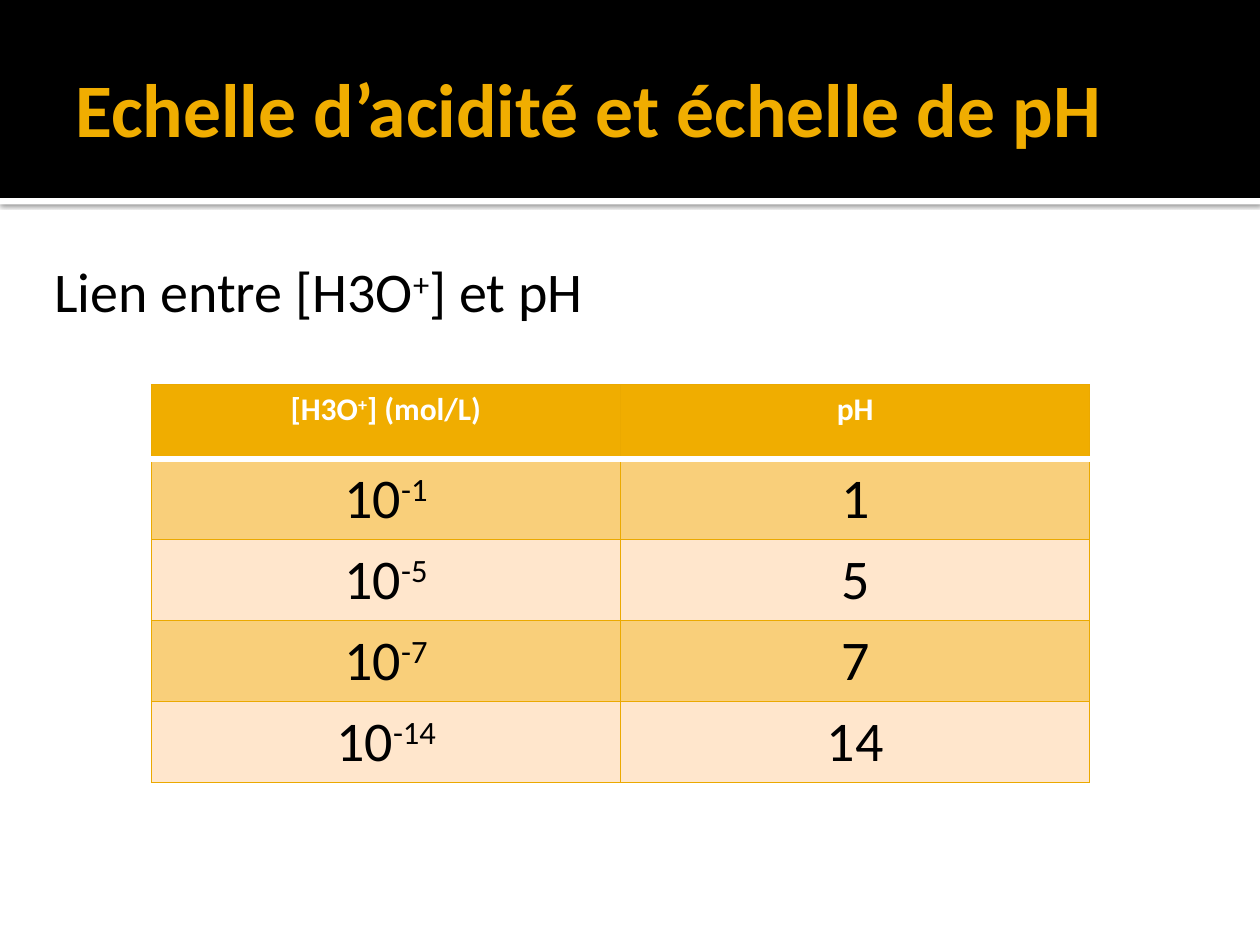
from dataclasses import dataclass

from lxml import etree
from pptx import Presentation
from pptx.dml.color import RGBColor
from pptx.enum.shapes import MSO_SHAPE
from pptx.enum.text import MSO_ANCHOR, PP_ALIGN
from pptx.oxml import parse_xml
from pptx.oxml.ns import nsdecls, qn
from pptx.util import Cm, Pt

RECTANGLE = MSO_SHAPE.RECTANGLE
TOP, MIDDLE = MSO_ANCHOR.TOP, MSO_ANCHOR.MIDDLE
LEFT, CENTER = PP_ALIGN.LEFT, PP_ALIGN.CENTER

FONT = "Calibri"
BLACK, WHITE, GOLD = "000000", "FFFFFF", "F0AD00"
GRID_GOLD, DARK_BAND, LIGHT_BAND = "EBA900", "F9CF7A", "FFE6CC"
SLIDE_WIDTH, SLIDE_HEIGHT = 25.4, 19.05
BANNER_HEIGHT = 3.99
HEADER_HEIGHT, ROW_HEIGHT, COLUMN_WIDTH = 1.5, 1.63, 9.46


@dataclass(frozen=True)
class TextStyle:
    size: float
    color: str
    bold: bool = False
    align: PP_ALIGN = LEFT


@dataclass(frozen=True)
class Formula:
    base: str
    exponent: str = ""
    rest: str = ""


@dataclass(frozen=True)
class Box:
    left: float
    top: float
    width: float
    height: float

    def lengths(self) -> tuple:
        return Cm(self.left), Cm(self.top), Cm(self.width), Cm(self.height)


TITLE = TextStyle(43.2, GOLD, bold=True)
SUBTITLE = TextStyle(32, BLACK)
HEADER = TextStyle(18, WHITE, bold=True, align=CENTER)
VALUE = TextStyle(32, BLACK, align=CENTER)
PH_VALUES = (1, 5, 7, 14)


def rgb(color: str) -> RGBColor:
    return RGBColor.from_string(color)


def write(frame, formula: Formula, style: TextStyle) -> None:
    paragraph = frame.paragraphs[0]
    paragraph.alignment = style.align
    paragraph.font.name = FONT
    paragraph.font.size = Pt(style.size)
    paragraph.font.bold = style.bold
    paragraph.font.color.rgb = rgb(style.color)
    for part in (formula.base, formula.exponent, formula.rest):
        if part:
            run = paragraph.add_run()
            run.text = part
            if part == formula.exponent:
                run.font.name = FONT
                run._r.get_or_add_rPr().set("baseline", "30000")


def add_text(slide, box: Box, formula: Formula, style: TextStyle,
             anchor: MSO_ANCHOR, margins: tuple) -> None:
    frame = slide.shapes.add_textbox(*box.lengths()).text_frame
    frame.word_wrap = True
    frame.vertical_anchor = anchor
    frame.margin_left, frame.margin_top = Cm(margins[0]), Cm(margins[1])
    frame.margin_right = frame.margin_bottom = Cm(0.13)
    write(frame, formula, style)


def add_band(slide, box: Box, color: str):
    band = slide.shapes.add_shape(RECTANGLE, *box.lengths())
    band.shadow.inherit = False
    band.fill.solid()
    band.fill.fore_color.rgb = rgb(color)
    band.line.fill.background()
    return band


def cast_shadow(band) -> None:
    effects = band._element.spPr.find(qn("a:effectLst"))
    effects.append(parse_xml(
        f'<a:outerShdw {nsdecls("a")} blurRad="{Pt(2.5)}" dist="{Pt(0.8)}" '
        f'dir="5400000" algn="tl" rotWithShape="0"><a:srgbClr val="{BLACK}">'
        '<a:alpha val="60000"/></a:srgbClr></a:outerShdw>'))


def add_border(cell, side: str, color: str, width: float) -> None:
    line = etree.SubElement(cell._tc.get_or_add_tcPr(), qn(f"a:ln{side}"),
                            w=str(Pt(width)))
    fill = etree.SubElement(line, qn("a:solidFill"))
    etree.SubElement(fill, qn("a:srgbClr"), val=color)


def fill_cell(cell, formula: Formula, style: TextStyle, color: str,
              borders: dict) -> None:
    for side in "LRTB":
        add_border(cell, side, *borders.get(side, (GRID_GOLD, 0.5)))
    cell.fill.solid()
    cell.fill.fore_color.rgb = rgb(color)
    write(cell.text_frame, formula, style)


def add_ph_table(slide) -> None:
    rows = [(Formula("[H3O", "+", "] (mol/L)"), Formula("pH"))]
    rows += [(Formula("10", f"-{ph}"), Formula(str(ph))) for ph in PH_VALUES]
    box = Box(3.05, 7.75, 2 * COLUMN_WIDTH,
              HEADER_HEIGHT + len(PH_VALUES) * ROW_HEIGHT)
    table = slide.shapes.add_table(len(rows), 2, *box.lengths()).table
    separator = (WHITE, 3.78)
    for column in table.columns:
        column.width = Cm(COLUMN_WIDTH)
    for index, formulas in enumerate(rows):
        if index == 0:
            height, style, color = HEADER_HEIGHT, HEADER, GOLD
            borders = {"B": separator}
        else:
            height, style = ROW_HEIGHT, VALUE
            color = DARK_BAND if index % 2 else LIGHT_BAND
            borders = {"T": separator} if index == 1 else {}
        table.rows[index].height = Cm(height)
        for column, formula in enumerate(formulas):
            fill_cell(table.cell(index, column), formula, style, color, borders)


def main() -> None:
    deck = Presentation()
    deck.slide_width, deck.slide_height = Cm(SLIDE_WIDTH), Cm(SLIDE_HEIGHT)
    slide = deck.slides.add_slide(deck.slide_layouts[6])
    cast_shadow(add_band(slide, Box(0, BANNER_HEIGHT, SLIDE_WIDTH, 0.13), WHITE))
    add_band(slide, Box(0, 0, SLIDE_WIDTH, BANNER_HEIGHT), BLACK)
    add_text(slide, Box(1.27, 0.43, 22.86, 3.48),
             Formula("Echelle d’acidité et échelle de pH"),
             TITLE, MIDDLE, (0.25, 0.13))
    add_text(slide, Box(0.61, 4.93, 24.79, 14.12),
             Formula("Lien entre [H3O", "+", "] et pH"),
             SUBTITLE, TOP, (0.48, 0.25))
    add_ph_table(slide)
    deck.save("out.pptx")


if __name__ == "__main__":
    main()
